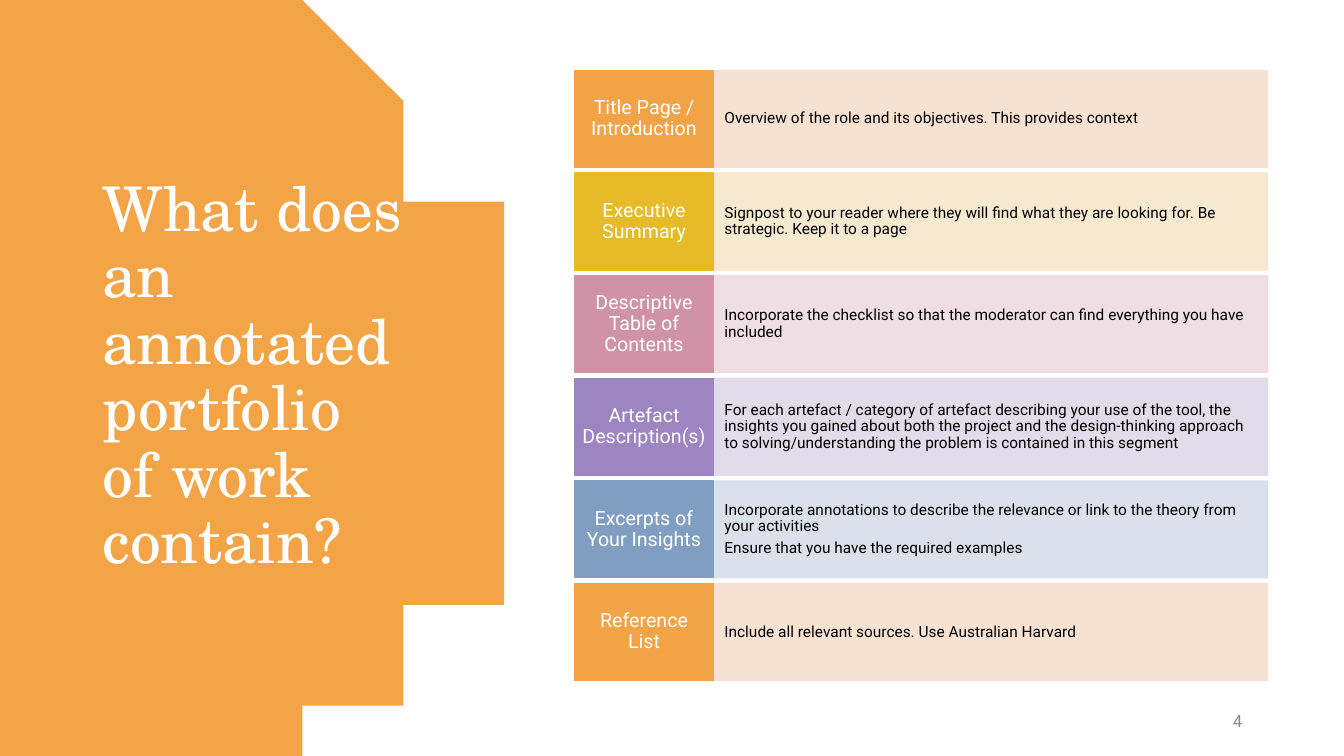
import math

from lxml import etree
from pptx import Presentation
from pptx import util as u
from pptx.dml.color import RGBColor
from pptx.enum import shapes, text
from pptx.oxml.ns import qn

WHITE = RGBColor(0xFF, 0xFF, 0xFF)
BLACK = RGBColor(0, 0, 0)
GREY = RGBColor(0x89, 0x89, 0x89)
PANEL_ORANGE = RGBColor(0xF3, 0xA4, 0x47)
ORANGE, PALE_ORANGE = RGBColor(0xF2, 0xA3, 0x46), RGBColor(0xF7, 0xDF, 0xCE)
YELLOW, PALE_YELLOW = RGBColor(0xE6, 0xBB, 0x27), RGBColor(0xF6, 0xE7, 0xCB)
PINK, PALE_PINK = RGBColor(0xCF, 0x92, 0xA7), RGBColor(0xEE, 0xDB, 0xE1)
PURPLE, PALE_PURPLE = RGBColor(0x9C, 0x85, 0xC0), RGBColor(0xDE, 0xD8, 0xE8)
BLUE, PALE_BLUE = RGBColor(0x80, 0x9E, 0xC2), RGBColor(0xD7, 0xDE, 0xE9)

HEADING_FONT = "TeX Gyre Schola"
BODY_FONT = "Roboto"

SECTIONS = [
    ("Title Page / Introduction", ORANGE, PALE_ORANGE,
     ["Overview of the role and its objectives. This provides context"]),
    ("Executive Summary", YELLOW, PALE_YELLOW,
     ["Signpost to your reader where they will find what they are looking for. "
      "Be strategic. Keep it to a page"]),
    ("Descriptive Table of Contents", PINK, PALE_PINK,
     ["Incorporate the checklist so that the moderator can find everything "
      "you have included"]),
    ("Artefact Description(s)", PURPLE, PALE_PURPLE,
     ["For each artefact / category of artefact describing your use of the tool, "
      "the insights you gained about both the project and the design-thinking "
      "approach to solving/understanding the problem is contained in this segment"]),
    ("Excerpts of Your Insights", BLUE, PALE_BLUE,
     ["Incorporate annotations to describe the relevance or link to the theory "
      "from your activities",
      "Ensure that you have the required examples"]),
    ("Reference List", ORANGE, PALE_ORANGE,
     ["Include all relevant sources. Use Australian Harvard"]),
]


def write(shape, lines, font, size, color, align=text.PP_ALIGN.LEFT,
          spacing=0.9, margins=(0.1, 0.05)):
    """Fill a shape with paragraphs; margins are (sides, top and bottom)."""
    frame = shape.text_frame
    frame.word_wrap = True
    frame.vertical_anchor = text.MSO_ANCHOR.MIDDLE
    frame.margin_left = frame.margin_right = u.Inches(margins[0])
    frame.margin_top = frame.margin_bottom = u.Inches(margins[1])
    for index, line in enumerate(lines):
        para = frame.add_paragraph() if index else frame.paragraphs[0]
        para.text = line
        para.alignment = align
        para.line_spacing = spacing
        para.space_before = u.Pt(3.9 if index else 0)
        para.font.name = font
        para.font.size = u.Pt(size)
        para.font.color.rgb = color


def add_text(page, left, top, width, height, *args, **options):
    box = page.shapes.add_textbox(*map(u.Inches, (left, top, width, height)))
    write(box, *args, **options)


def add_block(page, left, top, width, height, color, opacity=100):
    block = page.shapes.add_shape(shapes.MSO_SHAPE.RECTANGLE,
                                  *map(u.Inches, (left, top, width, height)))
    block.shadow.inherit = False
    block.fill.solid()
    block.fill.fore_color.rgb = color
    block.line.color.rgb = color
    block.line.width = u.Pt(1)
    if opacity < 100:
        for tone in block._element.spPr.iter(qn("a:srgbClr")):
            etree.SubElement(tone, qn("a:alpha")).set("val", str(opacity * 1000))
    return block


def add_round_panel(page, left, top, width, height, straight):
    """Panel whose right side is an arc; straight is the length of its top edge."""
    bulge = width - straight
    half = height / 2
    radius = (bulge ** 2 + half ** 2) / (2 * bulge)
    center_x, center_y = left + width - radius, top + half
    sweep = math.asin(half / radius)
    steps = 120
    angles = [sweep * (2 * step / steps - 1) for step in range(steps + 1)]
    arc = [(center_x + radius * math.cos(angle), center_y + radius * math.sin(angle))
           for angle in angles]
    builder = page.shapes.build_freeform(left, top, scale=u.Inches(1))
    builder.add_line_segments(arc + [(left, top + height)], close=True)
    panel = builder.convert_to_shape()
    panel.shadow.inherit = False
    panel.fill.solid()
    panel.fill.fore_color.rgb = PANEL_ORANGE
    panel.line.fill.background()


def add_section_list(page, left, top, width, height):
    label_width, row_height = 1.375, 0.96
    pitch = (height - row_height) / (len(SECTIONS) - 1)
    for index, (label, color, pale, details) in enumerate(SECTIONS):
        row_top = top + index * pitch
        detail = add_block(page, left + label_width, row_top,
                           width - label_width, row_height, pale, opacity=90)
        write(detail, details, BODY_FONT, 11, BLACK, margins=(0.11, 0.24))
        heading = add_block(page, left, row_top, label_width, row_height, color)
        write(heading, [label], BODY_FONT, 14, WHITE,
              align=text.PP_ALIGN.CENTER, margins=(0.07, 0.09))


def main():
    deck = Presentation()
    deck.slide_width, deck.slide_height = u.Inches(13.33), u.Inches(7.5)
    page = deck.slides.add_slide(deck.slide_layouts[6])
    add_round_panel(page, 0, 0, 4.93, 7.5, straight=2.83)
    add_text(page, 0.92, 0.7, 3.23, 6.09,
             ["What does an annotated portfolio of work contain?"],
             HEADING_FONT, 44, WHITE)
    add_section_list(page, 5.7, 0.7, 6.87, 6.05)
    add_text(page, 9.42, 6.95, 3, 0.4, ["4"], BODY_FONT, 12, GREY,
             align=text.PP_ALIGN.RIGHT, spacing=1.0)
    deck.save("out.pptx")


if __name__ == "__main__":
    main()
